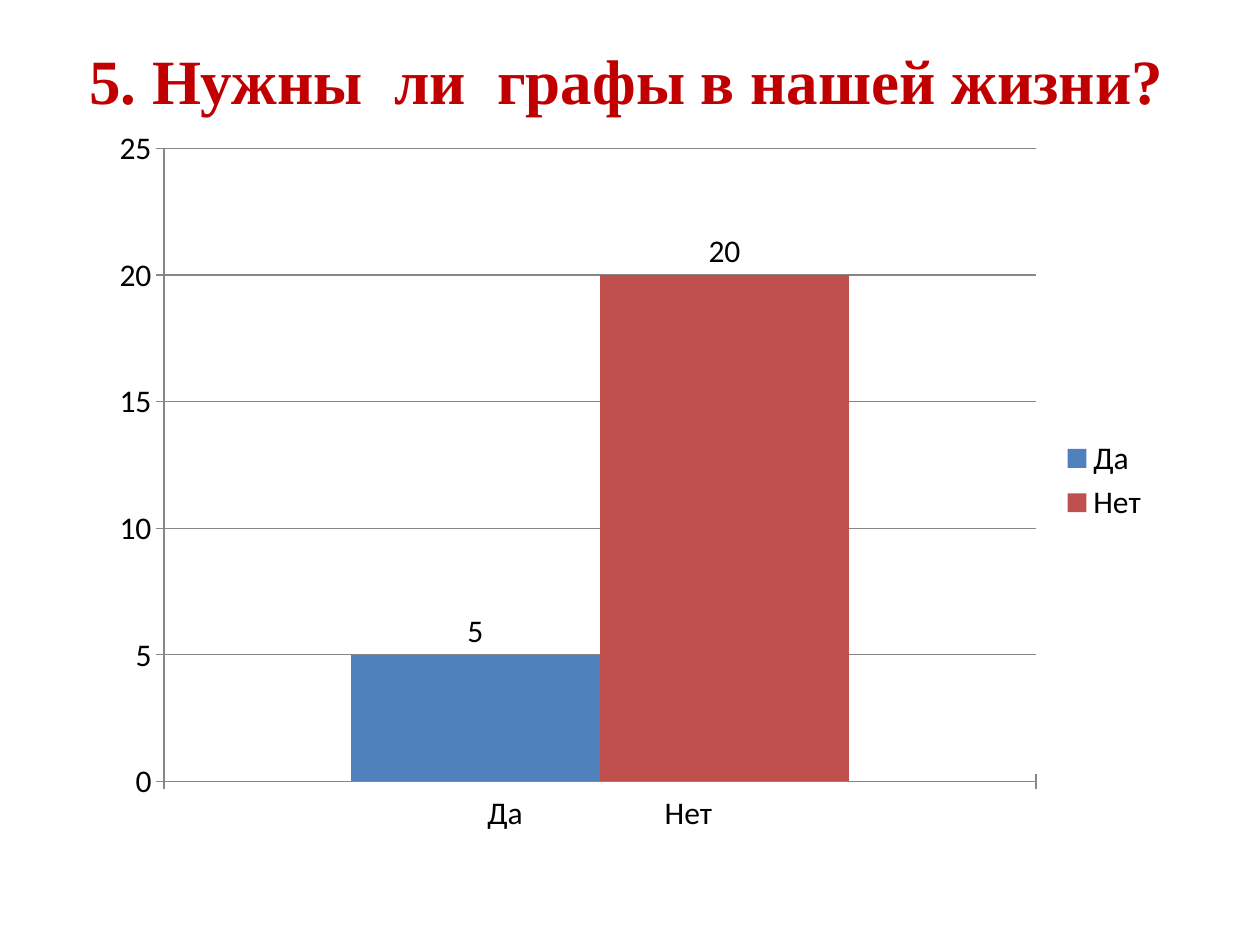
from pptx import Presentation
from pptx.chart.data import CategoryChartData
from pptx.dml.color import RGBColor
from pptx.enum.chart import XL_CHART_TYPE, XL_LABEL_POSITION, XL_LEGEND_POSITION, XL_TICK_MARK
from pptx.enum.text import MSO_ANCHOR, PP_ALIGN
from pptx.util import Inches, Pt

QUESTION = "5. Нужны  ли  графы в нашей жизни?"
ANSWER_AXIS = "Да                    Нет"
ANSWERS = [("Да", 5, "4F81BD"), ("Нет", 20, "C0504D")]


def color(hex_value):
    """Turn a hex string into a colour."""
    return RGBColor.from_string(hex_value)


def style_font(font, name, size, hex_value, bold=False):
    """Set the typeface, size, colour and weight of a font."""
    font.name = name
    font.size = Pt(size)
    font.bold = bold
    font.color.rgb = color(hex_value)


def add_heading(slide, text):
    """Add the centred question above the chart."""
    box = slide.shapes.add_textbox(Inches(0.47), Inches(0.52), Inches(9), Inches(0.63))
    frame = box.text_frame
    frame.word_wrap = True
    frame.vertical_anchor = MSO_ANCHOR.MIDDLE
    frame.margin_bottom = Inches(0.55)
    frame.text = text
    paragraph = frame.paragraphs[0]
    paragraph.alignment = PP_ALIGN.CENTER
    paragraph.line_spacing = 1.15
    paragraph.space_after = Pt(10)
    style_font(paragraph.runs[0].font, "Times New Roman", 36, "C00000", bold=True)


def style_axis(axis):
    """Give an axis its grey line and crossing tick marks."""
    axis.major_tick_mark = XL_TICK_MARK.CROSS
    axis.minor_tick_mark = XL_TICK_MARK.NONE
    style_line(axis.format.line)


def style_line(line):
    """Draw a thin grey chart line."""
    line.color.rgb = color("868686")
    line.width = Pt(0.75)


def add_answer_chart(slide, answers):
    """Add the clustered columns with one series per answer."""
    data = CategoryChartData()
    data.categories = [ANSWER_AXIS]
    for name, votes, _ in answers:
        data.add_series(name, [votes])
    chart = slide.shapes.add_chart(
        XL_CHART_TYPE.COLUMN_CLUSTERED,
        Inches(0.78), Inches(0.91), Inches(8.44), Inches(5.81), data,
    ).chart
    chart.has_title = False
    style_font(chart.font, "Calibri", 18, "000000")
    chart.has_legend = True
    chart.legend.position = XL_LEGEND_POSITION.RIGHT
    chart.legend.include_in_layout = False

    style_axis(chart.category_axis)
    style_axis(chart.value_axis)
    chart.value_axis.minimum_scale = 0
    chart.value_axis.maximum_scale = 25
    chart.value_axis.major_unit = 5
    chart.value_axis.has_major_gridlines = True
    style_line(chart.value_axis.major_gridlines.format.line)

    plot = chart.plots[0]
    plot.vary_by_categories = False
    plot.gap_width = 150
    plot.overlap = 0
    for series, (_, _, fill) in zip(plot.series, answers):
        series.format.fill.solid()
        series.format.fill.fore_color.rgb = color(fill)
    yes, no = plot.series
    yes.points[0].data_label.position = XL_LABEL_POSITION.OUTSIDE_END
    no.data_labels.show_value = True
    no.data_labels.position = XL_LABEL_POSITION.OUTSIDE_END
    style_font(no.data_labels.font, "Calibri", 18, "000000")


def main():
    """Build the survey slide and save it."""
    presentation = Presentation()
    presentation.slide_width = Inches(10)
    presentation.slide_height = Inches(7.5)
    slide = presentation.slides.add_slide(presentation.slide_layouts[6])
    add_heading(slide, QUESTION)
    add_answer_chart(slide, ANSWERS)
    presentation.save("out.pptx")


if __name__ == "__main__":
    main()
